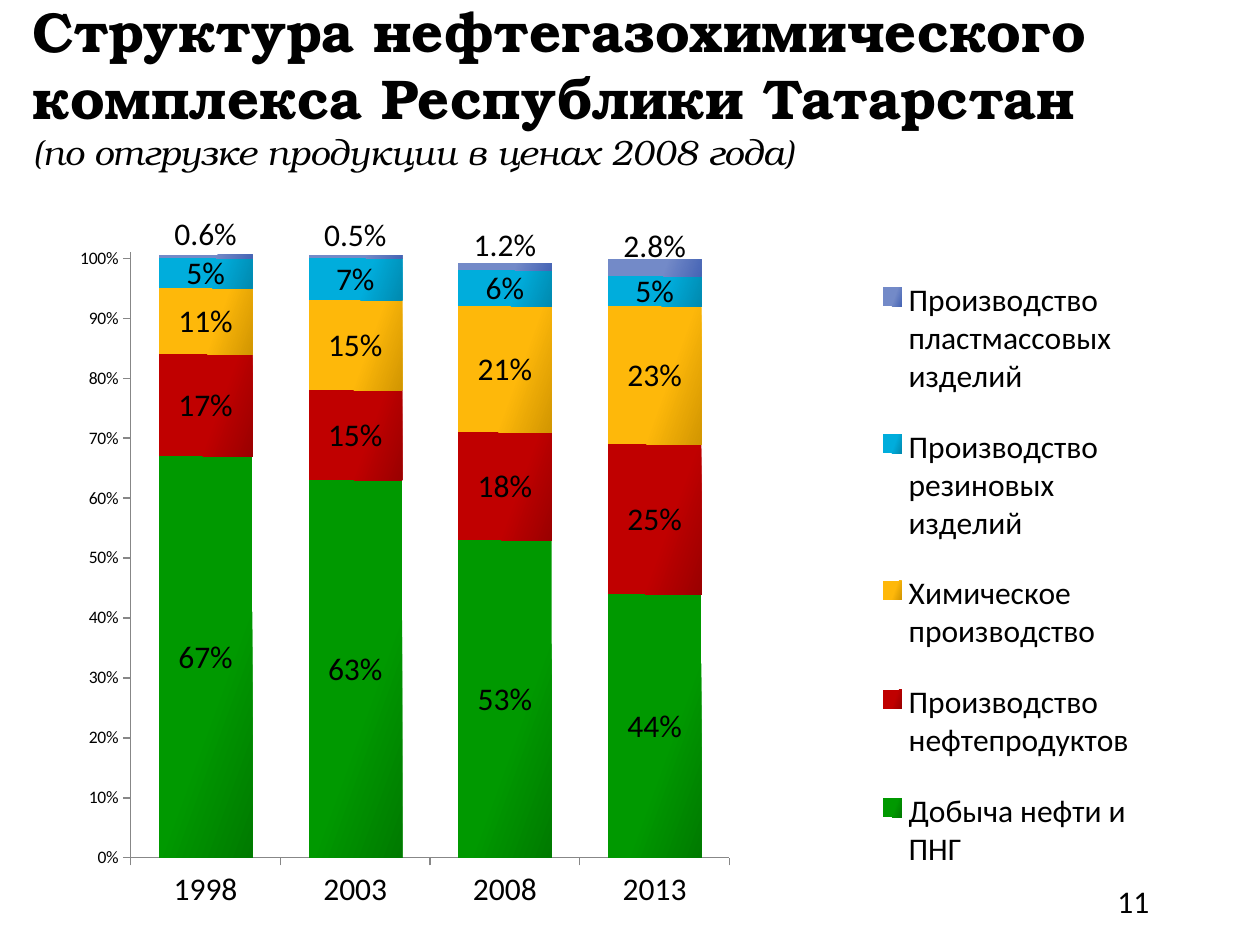
from typing import NamedTuple

from lxml import etree
from pptx import Presentation
from pptx.chart.data import CategoryChartData
from pptx.dml.color import RGBColor
from pptx.enum.chart import (XL_CHART_TYPE, XL_LABEL_POSITION,
                             XL_LEGEND_POSITION, XL_TICK_MARK)
from pptx.enum.text import MSO_ANCHOR, PP_ALIGN
from pptx.oxml.ns import qn
from pptx.util import Inches, Pt

STACKED = XL_CHART_TYPE.COLUMN_STACKED
CENTER = XL_LABEL_POSITION.CENTER
RIGHT_SIDE = XL_LEGEND_POSITION.RIGHT
OUTSIDE = XL_TICK_MARK.OUTSIDE
TOP = MSO_ANCHOR.TOP
LEFT, RIGHT = PP_ALIGN.LEFT, PP_ALIGN.RIGHT

COLORS = {"text": "000000", "axis": "878787", "oil": "009900",
          "fuel": "C00000", "chem": "FEB80A", "rubber": "00ADDC",
          "plastic": "738AC8"}
HEAD_FONT, BODY_FONT = "TeX Gyre Bonum", "Calibri"
YEARS = ("1998", "2003", "2008", "2013")
LABEL_RISE = -0.03
# Rounded shares add up to slightly more than 100 %.
SCALE_TOP = 1.01


class Branch(NamedTuple):
    name: str
    color: str
    shares: tuple


BRANCHES = (
    Branch("Добыча нефти и ПНГ", "oil", (0.67, 0.63, 0.53, 0.44)),
    Branch("Производство нефтепродуктов", "fuel", (0.17, 0.15, 0.18, 0.25)),
    Branch("Химическое производство", "chem", (0.11, 0.15, 0.21, 0.23)),
    Branch("Производство резиновых изделий", "rubber",
           (0.05, 0.07, 0.06, 0.05)),
    Branch("Производство пластмассовых изделий", "plastic",
           (0.006, 0.005, 0.012, 0.028)),
)


def rgb(key: str) -> RGBColor:
    return RGBColor.from_string(COLORS[key])


def style(font, size: float, face: str = BODY_FONT) -> None:
    font.size = Pt(size)
    font.name = face
    font.color.rgb = rgb("text")


def place(parent, index: int, **values) -> None:
    """Insert a manual chart layout as the given child of parent."""
    layout = etree.Element(qn("c:layout"))
    manual = etree.SubElement(layout, qn("c:manualLayout"))
    for tag, value in values.items():
        etree.SubElement(manual, qn(f"c:{tag}")).set("val", str(value))
    for old in parent.findall(qn("c:layout")):
        parent.remove(old)
    parent.insert(index, layout)


def shade(fill, key: str) -> None:
    """Fill with a colour that darkens towards the right edge."""
    fill.gradient()
    fill.gradient_angle = 340
    start, end = fill.gradient_stops
    for stop, spot in ((start, 0.6), (end, 1)):
        stop.color.rgb = rgb(key)
        stop.position = spot
    end.color.brightness = -0.2


def raise_labels(series) -> None:
    """Lift the labels of the thin top segments above the columns."""
    for i in range(len(YEARS)):
        label = series.points[i].data_label
        style(label.font, 18)
        label.position = CENTER
        node = series.data_labels._element.findall(qn("c:dLbl"))[i]
        place(node, 1, x=0, y=LABEL_RISE)
        form = etree.Element(qn("c:numFmt"), formatCode="0.0%",
                             sourceLinked="0")
        node.insert(2, form)


def add_title(slide) -> None:
    title = slide.shapes.title
    title.left, title.top = Inches(0.16), Inches(-0.08)
    title.width, title.height = Inches(9.45), Inches(1.51)
    frame = title.text_frame
    frame.text = ("Структура нефтегазохимического комплекса "
                  "Республики Татарстан\n"
                  "(по отгрузке продукции в ценах 2008 года)")
    frame.word_wrap = True
    frame.vertical_anchor = TOP
    for para, size, bold in zip(frame.paragraphs, (32, 20), (True, False)):
        para.alignment = LEFT
        para.space_before = Pt(0)
        font = para.runs[0].font
        style(font, size, HEAD_FONT)
        font.bold, font.italic = bold, not bold


def add_chart(slide) -> None:
    data = CategoryChartData(number_format="0%")
    data.categories = YEARS
    for branch in BRANCHES:
        data.add_series(branch.name, branch.shares)
    chart = slide.shapes.add_chart(
        STACKED, Inches(0.06), Inches(1.6), Inches(9.88), Inches(5.75),
        data).chart
    chart.has_title = False
    style(chart.font, 18)

    plot = chart.plots[0]
    plot.gap_width, plot.overlap = 60, 100
    plot.vary_by_categories = False
    for series, branch in zip(plot.series, BRANCHES):
        shade(series.format.fill, branch.color)
        labels = series.data_labels
        labels.show_value = True
        labels.number_format = "0%"
        labels.number_format_is_linked = False
        labels.position = CENTER
        style(labels.font, 18)
    raise_labels(plot.series[-1])

    for axis, size in ((chart.category_axis, 18), (chart.value_axis, 10)):
        axis.has_major_gridlines = False
        axis.major_tick_mark = OUTSIDE
        axis.format.line.color.rgb = rgb("axis")
        style(axis.tick_labels.font, size)
    scale = chart.value_axis
    scale.minimum_scale, scale.maximum_scale = 0, SCALE_TOP
    scale.major_unit = 0.1
    scale.tick_labels.number_format = "0%"
    scale.tick_labels.number_format_is_linked = False

    chart.has_legend = True
    legend = chart.legend
    legend.position = RIGHT_SIDE
    legend.include_in_layout = False
    style(legend.font, 18)
    place(legend._element, 1, xMode="edge", yMode="edge",
          x=0.692, y=0.065, w=0.22, h=0.9)
    area = chart._chartSpace.chart.plotArea
    place(area, 0, layoutTarget="inner", xMode="edge", yMode="edge",
          x=0.099, y=0.07, w=0.481, h=0.836)


def add_number(slide) -> None:
    box = slide.shapes.add_textbox(Inches(7.05), Inches(6.95),
                                   Inches(2.17), Inches(0.4))
    frame = box.text_frame
    frame.word_wrap = True
    frame.text = "11"
    para = frame.paragraphs[0]
    para.alignment = RIGHT
    style(para.runs[0].font, 18)


def main() -> None:
    deck = Presentation()
    deck.slide_width, deck.slide_height = Inches(10), Inches(7.5)
    slide = deck.slides.add_slide(deck.slide_layouts[5])
    add_chart(slide)
    add_title(slide)
    add_number(slide)
    deck.save("out.pptx")


if __name__ == "__main__":
    main()
